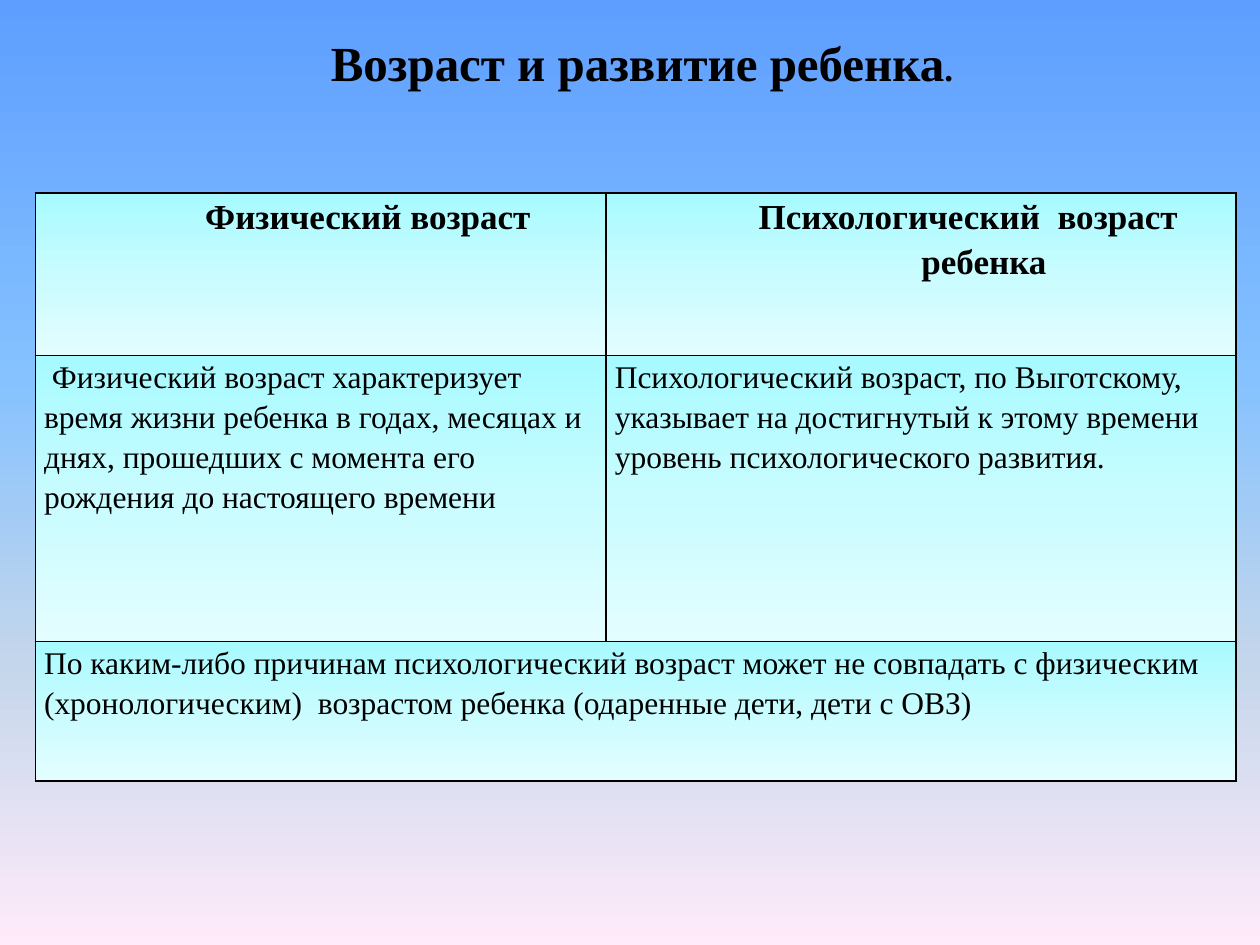
import dataclasses

import pptx
import pptx.dml.color
import pptx.enum.text
import pptx.oxml
import pptx.oxml.ns
import pptx.util

FONT = "Times New Roman"
BLACK = "000000"
SKY = [(0, "5E9EFF"), (40, "85C2FF"), (70, "C4D6EB"), (100, "FFEBFA")]
AQUA = [(0, "A7FAFF"), (50, "C9FCFF"), (100, "E4FDFF")]

WIDTH = pptx.util.Inches(10)
HEIGHT = pptx.util.Inches(7.5)
COLUMNS = [45.3, 50]  # percent of the slide's width
ROWS = [17.2, 30.27, 14.8]  # percent of the slide's height


@dataclasses.dataclass
class TableText:
    row: int
    col: int
    text: str
    header: bool = False
    span: int = 1


TEXTS = [
    TableText(0, 0, "Физический возраст", header=True),
    TableText(0, 1, "Психологический  возраст ребенка", header=True),
    TableText(1, 0, " Физический возраст характеризует время жизни ребенка в годах, "
                    "месяцах и днях, прошедших с момента его рождения до настоящего времени"),
    TableText(1, 1, "Психологический возраст, по Выготскому, указывает на достигнутый "
                    "к этому времени уровень психологического развития."),
    TableText(2, 0, "По каким-либо причинам психологический возраст может не совпадать "
                    "с физическим (хронологическим)  возрастом ребенка "
                    "(одаренные дети, дети с ОВЗ)", span=2),
]


def across(percent: float) -> int:
    return round(WIDTH * percent / 100)


def down(percent: float) -> int:
    return round(HEIGHT * percent / 100)


def rgb(color: str) -> pptx.dml.color.RGBColor:
    return pptx.dml.color.RGBColor.from_string(color)


def xml(body: str):
    return pptx.oxml.parse_xml(body.replace(" ", f" {pptx.oxml.ns.nsdecls('a')} ", 1))


def fill_gradient(fill, owner, stops: list) -> None:
    """Give owner a top-to-bottom gradient with any number of stops."""
    fill.gradient()
    fill.gradient_angle = 270
    gs_list = next(owner.iter(pptx.oxml.ns.qn("a:gsLst")))
    for gs in list(gs_list):
        gs_list.remove(gs)
    for percent, color in stops:
        gs_list.append(xml(f'<a:gs pos="{percent * 1000}">'
                           f'<a:srgbClr val="{color}"/></a:gs>'))


def add_text(p, text: str, *, size: float, bold: bool = False, centered: bool = False,
             color: str = BLACK, margin: float = 0, indent: float = 0) -> None:
    align = pptx.enum.text.PP_ALIGN
    p.alignment = align.CENTER if centered else align.LEFT
    p_pr = p._p.get_or_add_pPr()
    p_pr.set("marL", str(pptx.util.Inches(margin)))
    p_pr.set("indent", str(pptx.util.Inches(indent)))
    r = p.add_run()
    r.text = text
    r.font.name = FONT
    r.font.size = pptx.util.Pt(size)
    r.font.bold = bold
    r.font.color.rgb = rgb(color)


def add_borders(cell, color: str = BLACK, width: float = 1) -> None:
    tc_pr = cell._tc.get_or_add_tcPr()
    for side in "LRTB":
        tc_pr.append(xml(f'<a:ln{side} w="{pptx.util.Pt(width)}"><a:solidFill>'
                         f'<a:srgbClr val="{color}"/></a:solidFill></a:ln{side}>'))


def add_title(slide) -> None:
    sp = slide.shapes.add_textbox(across(3.5), down(2.8), across(94.5), down(9.47))
    tf = sp.text_frame
    tf.word_wrap = True
    p = tf.paragraphs[0]
    p.space_before = pptx.util.Pt(4)
    for text, size in [("Возраст и развитие ребенка", 28), (".", 20)]:
        add_text(p, text, size=size, bold=True, centered=True, margin=0.46, indent=-0.42)


def add_age_table(slide) -> None:
    table = slide.shapes.add_table(len(ROWS), len(COLUMNS), across(2.8), down(20.4),
                                   across(sum(COLUMNS)), down(sum(ROWS))).table
    table.first_row = table.horz_banding = False
    for column, width in zip(table.columns, COLUMNS):
        column.width = across(width)
    for row, height in zip(table.rows, ROWS):
        row.height = down(height)
    for cell in table.iter_cells():
        cell.margin_left = cell.margin_right = pptx.util.Inches(0.07)
        cell.margin_top = cell.margin_bottom = 0
        add_borders(cell)
        fill_gradient(cell.fill, cell._tc, AQUA)
    for item in TEXTS:
        cell = table.cell(item.row, item.col)
        if item.span > 1:
            cell.merge(table.cell(item.row, item.col + item.span - 1))
        p = cell.text_frame.paragraphs[0]
        p.line_spacing = 1.15
        if item.header:
            add_text(p, item.text, size=20, bold=True, centered=True,
                     margin=1, indent=-0.25)
        else:
            add_text(p, item.text, size=18)


def main() -> None:
    prs = pptx.Presentation()
    prs.slide_width, prs.slide_height = WIDTH, HEIGHT
    slide = prs.slides.add_slide(prs.slide_layouts[6])
    fill_gradient(slide.background.fill, slide.element, SKY)
    add_title(slide)
    add_age_table(slide)
    prs.save("out.pptx")


if __name__ == "__main__":
    main()
